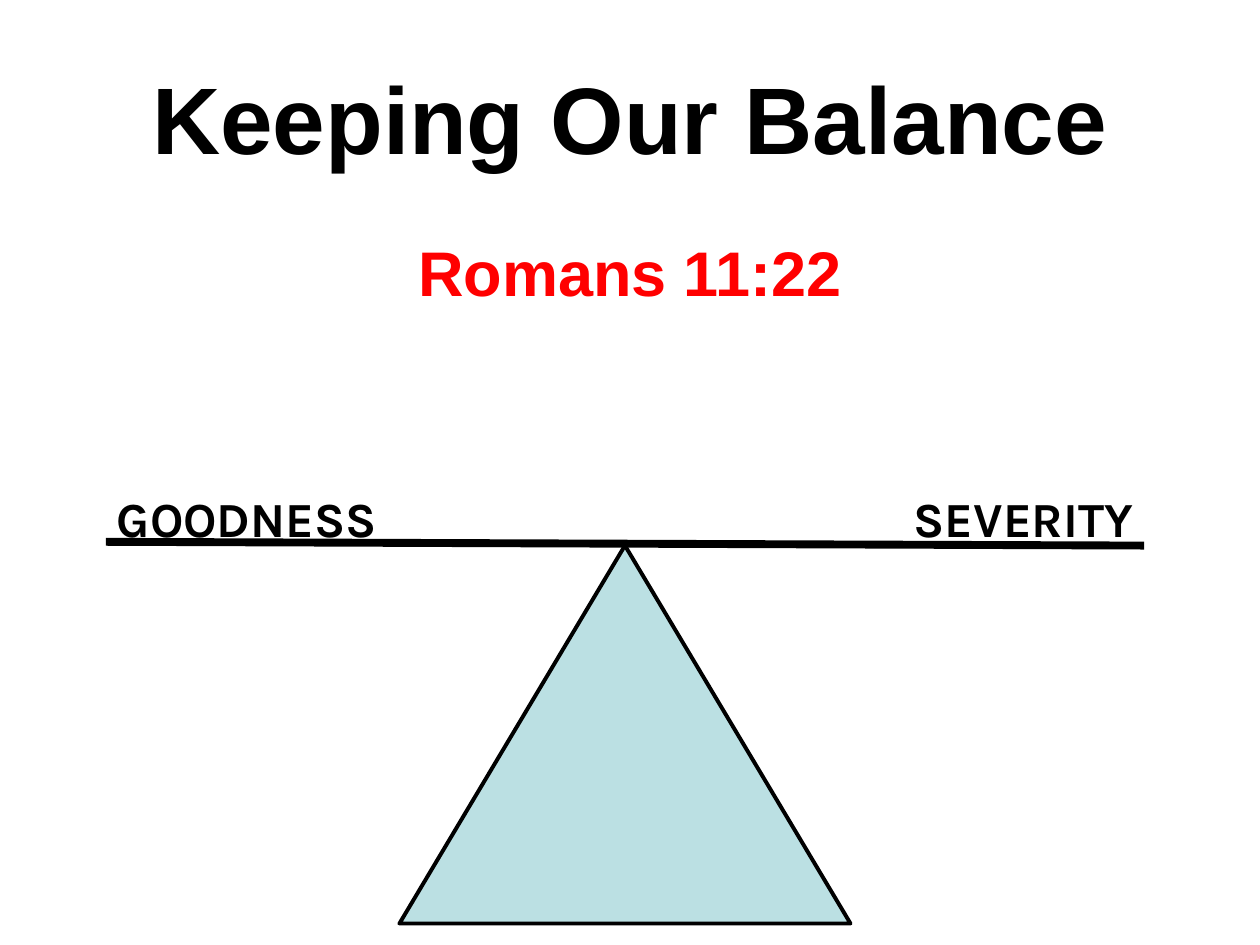
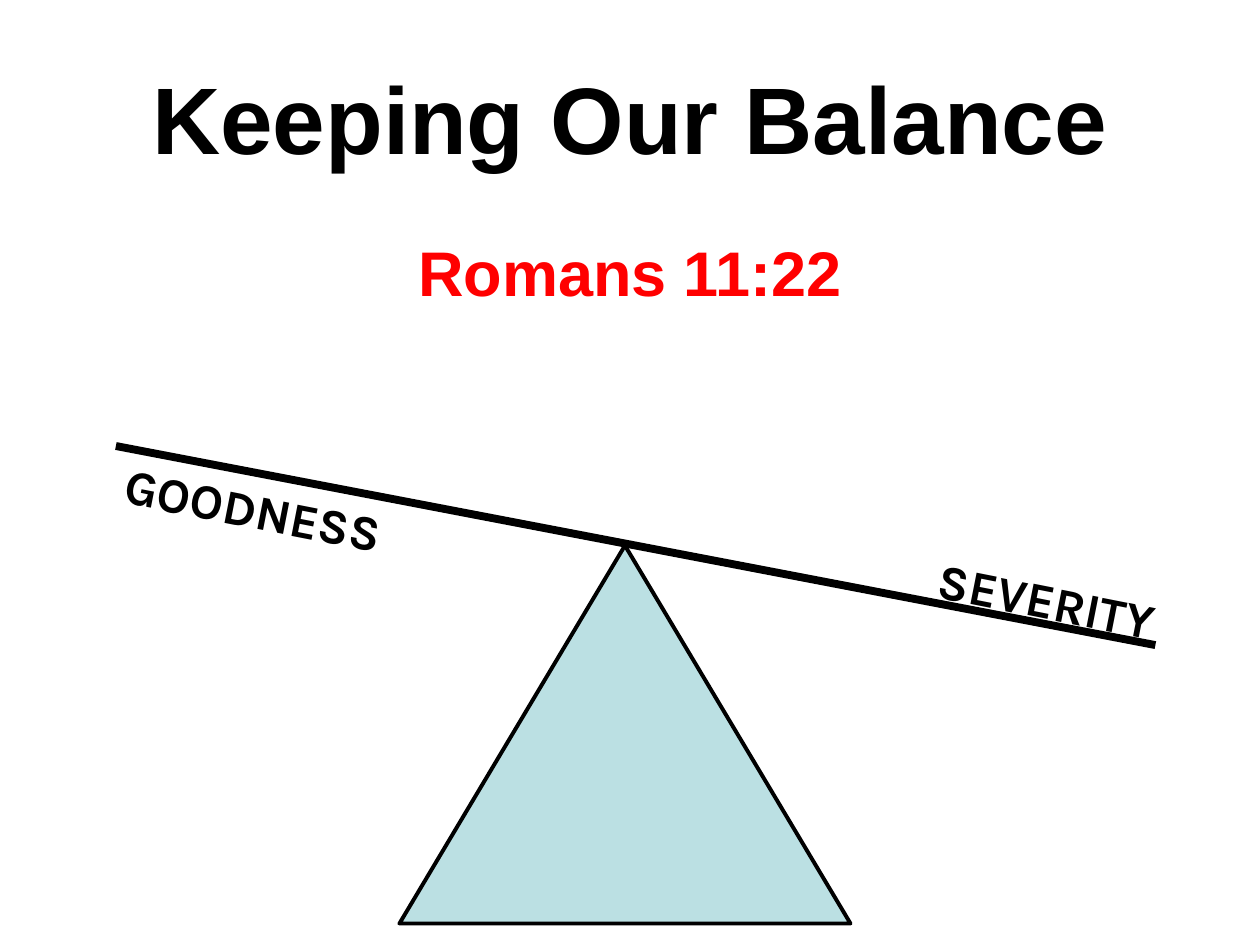
from dataclasses import dataclass

from lxml.etree import SubElement
from pptx import Presentation
from pptx.dml.color import RGBColor as Color
from pptx.enum.shapes import MSO_CONNECTOR as Connector, MSO_SHAPE as Shape
from pptx.enum.text import MSO_ANCHOR as Anchor, PP_ALIGN as Align
from pptx.oxml.ns import qn
from pptx.util import Inches, Pt

COLUMNS, ROWS = 100, 75
CELL = Inches(0.1)


@dataclass(frozen=True)
class Theme:
    ink: Color = Color(0, 0, 0)
    accent: Color = Color(255, 0, 0)
    pivot: Color = Color(0xBB, 0xE0, 0xE3)
    heading_font: str = "Arial"
    label_font: str = "Karla"
    title_size: int = 54
    verse_size: int = 36
    label_size: int = 28
    beam_width: float = 4.5
    outline_width: float = 2.25


THEME = Theme()


def cells(*lengths):
    return [round(length * CELL) for length in lengths]


def add_text(page, area, text, size, font, color=THEME.ink, align=Align.CENTER,
             anchor=Anchor.TOP, rotation=0, top_inset=0.5):
    box = page.shapes.add_textbox(*cells(*area))
    box.rotation = rotation
    frame = box.text_frame
    frame.word_wrap = True
    frame.vertical_anchor = anchor
    frame.margin_top = cells(top_inset)[0]
    para = frame.paragraphs[0]
    para.text = text
    para.alignment = align
    para.font.name = font
    para.font.size = Pt(size)
    para.font.bold = True
    para.font.color.rgb = color


def add_label(page, area, text, align, **placement):
    add_text(page, area, text, THEME.label_size, THEME.label_font,
             align=align, **placement)


def add_headings(page):
    add_text(page, (5, 3, COLUMNS - 10, 12.5), "Keeping Our Balance",
             THEME.title_size, THEME.heading_font, anchor=Anchor.MIDDLE)
    add_text(page, (0, 17.5, COLUMNS, 7.1), "Romans 11:22",
             THEME.verse_size, THEME.heading_font, THEME.accent, top_inset=1)


def add_pivot(page):
    pivot = page.shapes.add_shape(Shape.ISOSCELES_TRIANGLE,
                                  *cells(31.7, 43.3, 35.8, 30))
    pivot.shadow.inherit = False
    pivot.fill.solid()
    pivot.fill.fore_color.rgb = THEME.pivot
    pivot.line.color.rgb = THEME.ink
    pivot.line.width = Pt(THEME.outline_width)


def add_beam(page, start, end):
    beam = page.shapes.add_connector(Connector.STRAIGHT, *cells(*start, *end))
    beam.line.color.rgb = THEME.ink
    beam.line.width = Pt(THEME.beam_width)
    SubElement(beam._element.spPr, qn("a:effectLst"))


def add_scale_page(deck, beam_start, beam_end, severity_area, goodness_area,
                   severity_tilt=0, goodness_tilt=0, goodness_inset=0.5):
    page = deck.slides.add_slide(deck.slide_layouts[6])
    add_headings(page)
    add_pivot(page)
    add_beam(page, beam_start, beam_end)
    add_label(page, severity_area, "SEVERITY", Align.RIGHT,
              rotation=severity_tilt)
    add_label(page, goodness_area, "GOODNESS", Align.LEFT,
              rotation=goodness_tilt, top_inset=goodness_inset)


def main():
    deck = Presentation()
    deck.slide_width, deck.slide_height = cells(COLUMNS, ROWS)
    add_scale_page(deck, (8.4, 43), (90.8, 43.3),
                   severity_area=(69.2, 38.3, 21.7, 5.7),
                   goodness_area=(8.3, 38.3, 27.5, 5.7))
    add_scale_page(deck, (9.2, 35.4), (91.7, 51.2),
                   severity_area=(69.8, 44.4, 23, 5.7),
                   goodness_area=(9.7, 33.1, 24.5, 5.7),
                   severity_tilt=11.2, goodness_tilt=11.1, goodness_inset=5.2)
    deck.save("out.pptx")


if __name__ == "__main__":
    main()
